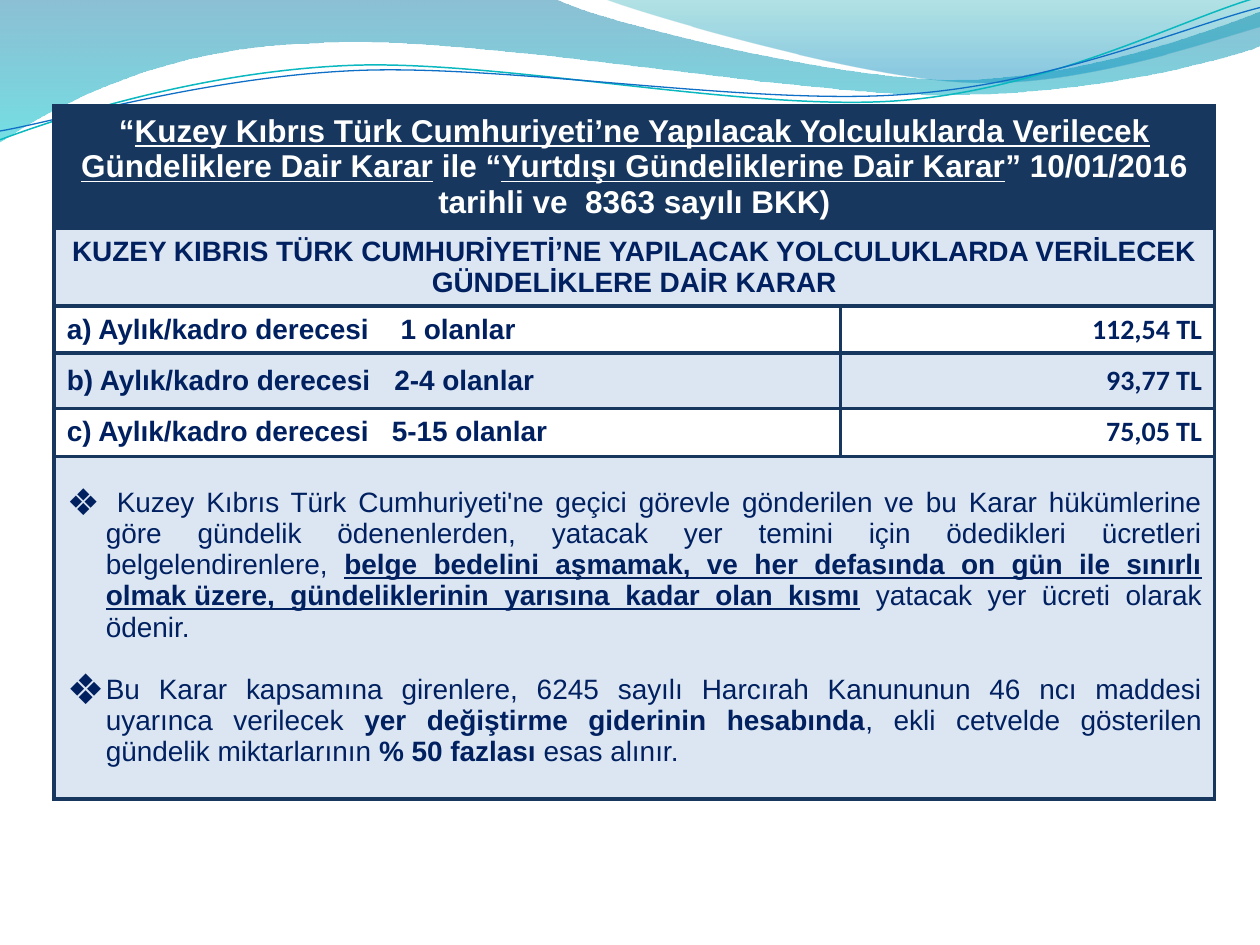
"""Build a slide with a per diem table under a wave banner."""
from lxml import etree
from pptx import Presentation, util as u
from pptx.dml.color import RGBColor
from pptx.enum import text
from pptx.oxml import ns

W, H = u.Inches(10), u.Inches(7.5)
UNIT = W / 10
NAVY, INK, PALE, WHITE = "17375E", "002060", "DCE6F2", "FFFFFF"
ALIGN = text.PP_ALIGN
COLS = (6.24, 2.97)
ROWS = (0.97, 0.62, 0.36, 0.44, 0.38, 2.72)
RATES = (("a", "1", "112,54 TL", 2.65), ("b", "2-4", "93,77 TL", 2.6),
         ("c", "5-15", "75,05 TL", 2.58))
TITLE = (
    ("“", {}),
    ("Kuzey Kıbrıs Türk Cumhuriyeti’ne Yapılacak Yolculuklarda Verilecek "
     "Gündeliklere Dair Karar", {"underline": True}),
    (" ile “", {}),
    ("Yurtdışı Gündeliklerine Dair Karar", {"underline": True}),
    ("” 10/01/2016 tarihli ve  8363 sayılı BKK)", {}),
)
SUBTITLE = (("KUZEY KIBRIS TÜRK CUMHURİYETİ’NE YAPILACAK YOLCULUKLARDA VERİLECEK "
             "GÜNDELİKLERE DAİR KARAR", {}),)
NOTES = (
    ((" ", {"size": u.Pt(14)}),
     ("Kuzey Kıbrıs Türk Cumhuriyeti'ne geçici görevle gönderilen ve bu Karar "
      "hükümlerine göre gündelik ödenenlerden, yatacak yer temini için ödedikleri "
      "ücretleri belgelendirenlere, ", {}),
     ("belge bedelini aşmamak, ve her defasında on gün ile sınırlı "
      + chr(160).join(("olmak", "üzere,")) +
      " gündeliklerinin yarısına kadar olan kısmı", {"bold": True, "underline": True}),
     (" yatacak yer ücreti olarak ödenir.", {})),
    (("Bu Karar kapsamına girenlere, 6245 sayılı Harcırah Kanununun 46 ncı maddesi "
      "uyarınca verilecek ", {}),
     ("yer değiştirme giderinin hesabında", {"bold": True}),
     (", ekli cetvelde gösterilen gündelik miktarlarının ", {}),
     ("% 50 fazlası ", {"bold": True}),
     ("esas alınır.", {})),
)
UPPER_WAVE = ((0, 0), (
    ((4.4, -0.01),),
    ((4.76, 0.17), (6.64, 0.63), (7.58, 0.63)),
    ((8.53, 0.63), (9.58, 0.26), (10, 0.09)),
    ((10.01, 0.36),),
    ((9.83, 0.44), (8.7, 0.76), (7.46, 0.75)),
    ((6.22, 0.75), (3.82, 0.28), (2.57, 0.34)),
    ((1.29, 0.36), (0.46, 0.83), (-0.01, 1.13)),
    ((0, 0),)))
RIGHT_WAVE = ((4.79, -0.01), (
    ((5.09, 0.11), (6.82, 0.62), (7.69, 0.65)),
    ((8.56, 0.69), (9.61, 0.32), (10, 0.21)),
    ((10, 0),),
    ((4.79, -0.01),)))
TEAL_LINE = ((0, 1.11), (
    ((0.48, 0.93), (1.58, 0.57), (2.77, 0.52)),
    ((3.95, 0.47), (5.93, 0.89), (7.13, 0.8)),
    ((8.33, 0.71), (9.38, 0.15), (9.98, -0.02))))
BLUE_LINE = ((0, 1.04), (
    ((0.47, 0.96), (1.64, 0.61), (2.83, 0.56)),
    ((4.03, 0.51), (5.97, 0.84), (7.17, 0.75)),
    ((8.36, 0.67), (9.41, 0.21), (10, 0.06))))


def rgb(value):
    """Turn a hex string into a colour."""
    return RGBColor.from_string(value)


def child(parent, tag, **attrs):
    """Append a DrawingML element."""
    return etree.SubElement(parent, ns.qn("a:" + tag), attrs)


def add_outline(s, outline, close):
    """Draw an outline whose three-point segments are cubic curves."""
    start, segments = outline
    builder = s.shapes.build_freeform(*(round(v * UNIT) for v in start))
    builder.add_line_segments([(round(x * UNIT), round(y * UNIT))
                               for seg in segments for x, y in seg], close=close)
    sp = builder.convert_to_shape()
    sp.shadow.inherit = False
    lines = iter(list(sp._element.spPr.iter(ns.qn("a:lnTo"))))
    for seg in segments:
        group = [next(lines) for _ in seg]
        if len(group) == 3:
            curve = etree.Element(ns.qn("a:cubicBezTo"))
            group[0].addprevious(curve)
            for line in group:
                curve.append(line[0])
                line.getparent().remove(line)
    return sp


def add_wave(s, outline, stops):
    """Draw a wave with a see-through vertical gradient."""
    sp = add_outline(s, outline, True)
    sp.line.fill.background()
    sp.fill.gradient()
    sp.fill.gradient_angle = 270
    for stop, (position, color, _) in zip(sp.fill.gradient_stops, stops):
        stop.position, stop.color.rgb = position, rgb(color)
    for clr, (_, _, alpha) in zip(sp._element.spPr.iter(ns.qn("a:srgbClr")), stops):
        child(clr, "alpha", val=str(alpha * 1000))


def add_curve(s, outline, color, width):
    """Draw an open curved line."""
    sp = add_outline(s, outline, False)
    sp.fill.background()
    sp.line.color.rgb, sp.line.width = rgb(color), u.Pt(width)


def style_cell(cell, fill):
    """Fill and border a cell."""
    cell.fill.solid()
    cell.fill.fore_color.rgb = rgb(fill)
    cell.vertical_anchor = text.MSO_ANCHOR.MIDDLE
    tc_pr = cell._tc.get_or_add_tcPr()
    for i, side in enumerate(("lnL", "lnR", "lnT", "lnB")):
        ln = child(tc_pr, side, w=str(u.Pt(2.25)))
        child(child(ln, "solidFill"), "srgbClr", val=NAVY)
        tc_pr.insert(i, ln)


def write(p, runs, align=ALIGN.LEFT, size=16, color=INK, bold=True, name="Arial"):
    """Write runs into a paragraph."""
    p.alignment = align
    f = p.font
    f.name, f.size, f.bold, f.color.rgb = name, u.Pt(size), bold, rgb(color)
    for words, changes in runs:
        r = p.add_run()
        r.text = words
        for key, value in changes.items():
            setattr(r.font, key, value)


def set_bullet(p):
    """Give a paragraph a hanging diamond bullet."""
    p_pr = p._p.get_or_add_pPr()
    indent = u.Inches(0.31)
    p_pr.set("marL", str(indent))
    p_pr.set("indent", str(-indent))
    child(p_pr, "buSzPct", val="150000")
    child(p_pr, "buFont", typeface="Arial")
    child(p_pr, "buChar", char="❖")


def set_tab(p, position):
    """Give a paragraph one left tab stop."""
    tabs = child(p._p.get_or_add_pPr(), "tabLst")
    child(tabs, "tab", pos=str(u.Inches(position)), algn="l")


def add_rates_table(s):
    """Add the table with headings, rates and notes."""
    width, height = sum(COLS) * UNIT, sum(ROWS) * UNIT
    table = s.shapes.add_table(len(ROWS), len(COLS), u.Inches(0.43), u.Inches(0.84),
                               int(width), int(height)).table
    table.first_row = table.horz_banding = False
    for column, share in zip(table.columns, COLS):
        column.width = int(share * UNIT)
    fills = (NAVY, PALE, WHITE, PALE, WHITE, PALE)
    for i, (row, share, fill) in enumerate(zip(table.rows, ROWS, fills)):
        row.height = int(share * UNIT)
        for cell in row.cells:
            style_cell(cell, fill)
        if i in (0, 1, 5):
            table.cell(i, 0).merge(table.cell(i, 1))

    def first(row, col=0):
        """Return the first paragraph of a cell."""
        return table.cell(row, col).text_frame.paragraphs[0]

    write(first(0), TITLE, ALIGN.CENTER, 18, WHITE)
    write(first(1), SUBTITLE, ALIGN.CENTER)
    for i, (letter, grade, rate, tab) in enumerate(RATES, 2):
        set_tab(first(i), tab)
        write(first(i), ((f"{letter}) Aylık/kadro derecesi\t{grade} olanlar", {}),))
        write(first(i, 1), ((rate, {}),), ALIGN.RIGHT, name="Calibri")
    second = table.cell(5, 0).text_frame.add_paragraph()
    second.space_before = u.Pt(18)
    for p, runs in zip((first(5), second), NOTES):
        set_bullet(p)
        write(p, runs, ALIGN.JUSTIFY, bold=False)


def main():
    """Build and save the slide."""
    prs = Presentation()
    prs.slide_width, prs.slide_height = W, H
    s = prs.slides.add_slide(prs.slide_layouts[6])
    add_wave(s, UPPER_WAVE, ((0, "0074A1", 45), (1, "00C6CF", 55)))
    add_wave(s, RIGHT_WAVE, ((0, "00A1A9", 30), (0.8, "008BBF", 45)))
    add_curve(s, TEAL_LINE, "0AB8BF", 0.85)
    add_curve(s, BLUE_LINE, "0F6FC6", 0.75)
    add_rates_table(s)
    prs.save("out.pptx")


if __name__ == "__main__":
    main()
